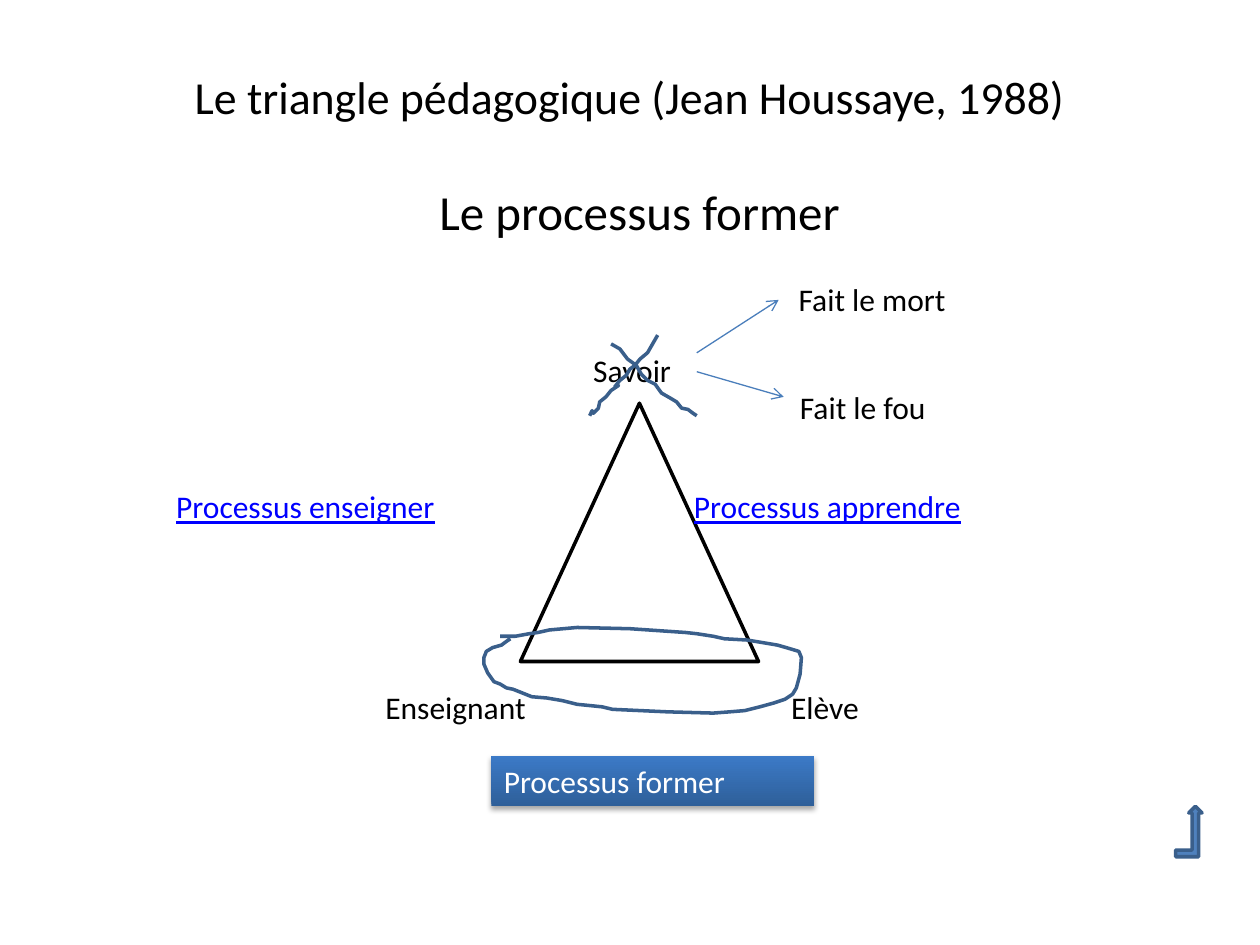
from lxml import etree
from pptx import Presentation
from pptx.dml.color import RGBColor
from pptx.enum.shapes import MSO_CONNECTOR, MSO_SHAPE
from pptx.enum.text import MSO_ANCHOR, PP_ALIGN
from pptx.oxml import parse_xml
from pptx.oxml.ns import nsdecls, qn
from pptx.util import Inches, Pt

COLORS = {
    "black": "000000", "white": "FFFFFF", "link": "0000FF",
    "ink": "3A5F8B", "arrow": "4A7EBB", "blue": "4F81BD",
    "grad_bottom": "2E5F99", "grad_top": "3C7AC7",
}


def rgb(name):
    return RGBColor.from_string(COLORS[name])


def write(sp, text, size=18, color="black", align=PP_ALIGN.LEFT,
          anchor=MSO_ANCHOR.TOP, wrap=True):
    tf = sp.text_frame
    tf.word_wrap = wrap
    tf.vertical_anchor = anchor
    p = tf.paragraphs[0]
    p.text = text
    p.alignment = align
    p.font.name = "Calibri"
    p.font.size = Pt(size)
    p.font.color.rgb = rgb(color)
    p.font.underline = color == "link"


prs = Presentation()
prs.slide_width, prs.slide_height = Inches(10), Inches(7.5)
s = prs.slides.add_slide(prs.slide_layouts[6])

# Triangle and return arrow
for kind, box, fill, line in [
    (MSO_SHAPE.ISOSCELES_TRIANGLE, (4.13, 3.2, 1.89, 2.05), "white", "black"),
    (MSO_SHAPE.BENT_UP_ARROW, (9.33, 6.4, 0.21, 0.4), "blue", "ink"),
]:
    sp = s.shapes.add_shape(kind, *map(Inches, box))
    sp.shadow.inherit = False
    sp.fill.solid()
    sp.fill.fore_color.rgb = rgb(fill)
    sp.line.color.rgb = rgb(line)
    sp.line.width = Pt(2)

# Title and subtitle
sp = s.shapes.add_textbox(Inches(0.5), Inches(0.3), Inches(8.99), Inches(0.93))
write(sp, "Le triangle pédagogique (Jean Houssaye, 1988)", 26.2,
      align=PP_ALIGN.CENTER, anchor=MSO_ANCHOR.MIDDLE)
sp = s.shapes.add_textbox(Inches(0.43), Inches(1.39), Inches(9.29), Inches(5.59))
write(sp, "Le processus former", 28, align=PP_ALIGN.CENTER)

# Labels around the triangle
for text, left, top, width, color, wrap in [
    ("Savoir", 4.61, 2.74, 1.42, "black", True),
    ("Enseignant", 2.96, 5.41, 2.05, "black", True),
    ("Elève", 6.18, 5.41, 1.65, "black", True),
    ("Processus enseigner", 1.3, 3.82, 2.75, "link", False),
    ("Processus apprendre", 5.41, 3.82, 2.8, "link", False),
    ("Fait le mort", 6.24, 2.17, 1.62, "black", False),
    ("Fait le fou", 6.25, 3.03, 1.42, "black", False),
]:
    sp = s.shapes.add_textbox(Inches(left), Inches(top), Inches(width), Inches(0.4))
    write(sp, text, color=color, wrap=wrap)

# Highlighted process: gradient box with a soft shadow
sp = s.shapes.add_shape(MSO_SHAPE.RECTANGLE, Inches(3.9), Inches(6), Inches(2.56), Inches(0.4))
sp.fill.gradient()
sp.fill.gradient_angle = 90
for stop, name in zip(sp.fill.gradient_stops, ("grad_bottom", "grad_top")):
    stop.color.rgb = rgb(name)
sp.line.fill.background()
sp._element.spPr.append(parse_xml(
    f'<a:effectLst {nsdecls("a")}><a:outerShdw blurRad="{Pt(3.1)}" dist="{Pt(1.8)}" '
    'dir="5400000" rotWithShape="0"><a:srgbClr val="000000"><a:alpha val="35000"/>'
    '</a:srgbClr></a:outerShdw></a:effectLst>'))
write(sp, "Processus former", color="white")

# Hand-drawn loop around the base, and the two strokes crossing out "Savoir"
loop = [
    (3.97, 5.05), (4.09, 5.05), (4.2, 5.03), (4.27, 5.02), (4.36, 5), (4.47, 4.99),
    (4.58, 4.98), (5, 4.99), (5.44, 5.02), (5.53, 5.03), (5.66, 5.05), (5.75, 5.07),
    (5.93, 5.08), (6.17, 5.12), (6.24, 5.14), (6.34, 5.17), (6.36, 5.22), (6.35, 5.35),
    (6.32, 5.46), (6.29, 5.51), (6.23, 5.55), (6.14, 5.58), (6.03, 5.61), (5.91, 5.64),
    (5.79, 5.65), (5.66, 5.66), (5.3, 5.65), (4.86, 5.63), (4.78, 5.61), (4.68, 5.6),
    (4.58, 5.59), (4.46, 5.56), (4.34, 5.54), (4.22, 5.53), (4.07, 5.47), (4.02, 5.46),
    (3.97, 5.43), (3.92, 5.41), (3.87, 5.34), (3.84, 5.27), (3.84, 5.22), (3.86, 5.17),
    (3.91, 5.14), (3.98, 5.12), (4.02, 5.09), (4.05, 5.07),
]
rising = [
    (5.22, 2.66), (5.18, 2.73), (5.14, 2.8), (5.08, 2.85), (5.04, 2.9), (5, 2.93),
    (4.97, 2.98), (4.92, 3.02), (4.88, 3.07), (4.91, 3.06), (4.85, 3.1), (4.81, 3.15),
    (4.76, 3.19), (4.75, 3.24), (4.71, 3.28), (4.7, 3.26), (4.68, 3.3),
]
falling = [
    (4.85, 2.73), (4.92, 2.77), (4.98, 2.85), (5.05, 2.9), (5.09, 2.97), (5.14, 3.02),
    (5.2, 3.05), (5.25, 3.12), (5.32, 3.16), (5.37, 3.19), (5.41, 3.24), (5.46, 3.25),
    (5.5, 3.28), (5.53, 3.3),
]
for points in (loop, rising, falling):
    points = [(Inches(x), Inches(y)) for x, y in points]
    builder = s.shapes.build_freeform(*points[0])
    builder.add_line_segments(points[1:], close=False)
    sp = builder.convert_to_shape()
    sp.shadow.inherit = False
    sp.fill.background()
    sp.line.color.rgb = rgb("ink")
    sp.line.width = Pt(2)
    etree.SubElement(sp.line._get_or_add_ln(), qn("a:round"))

# Arrows from "Savoir" to its two roles
for ends in [(5.53, 2.8, 6.18, 2.38), (5.53, 2.95, 6.22, 3.15)]:
    sp = s.shapes.add_connector(MSO_CONNECTOR.STRAIGHT, *map(Inches, ends))
    sp.line.color.rgb = rgb("arrow")
    sp.line.width = Pt(0.75)
    etree.SubElement(sp.line._get_or_add_ln(), qn("a:tailEnd"), type="arrow")
    etree.SubElement(sp._element.spPr, qn("a:effectLst"))

prs.save("out.pptx")
